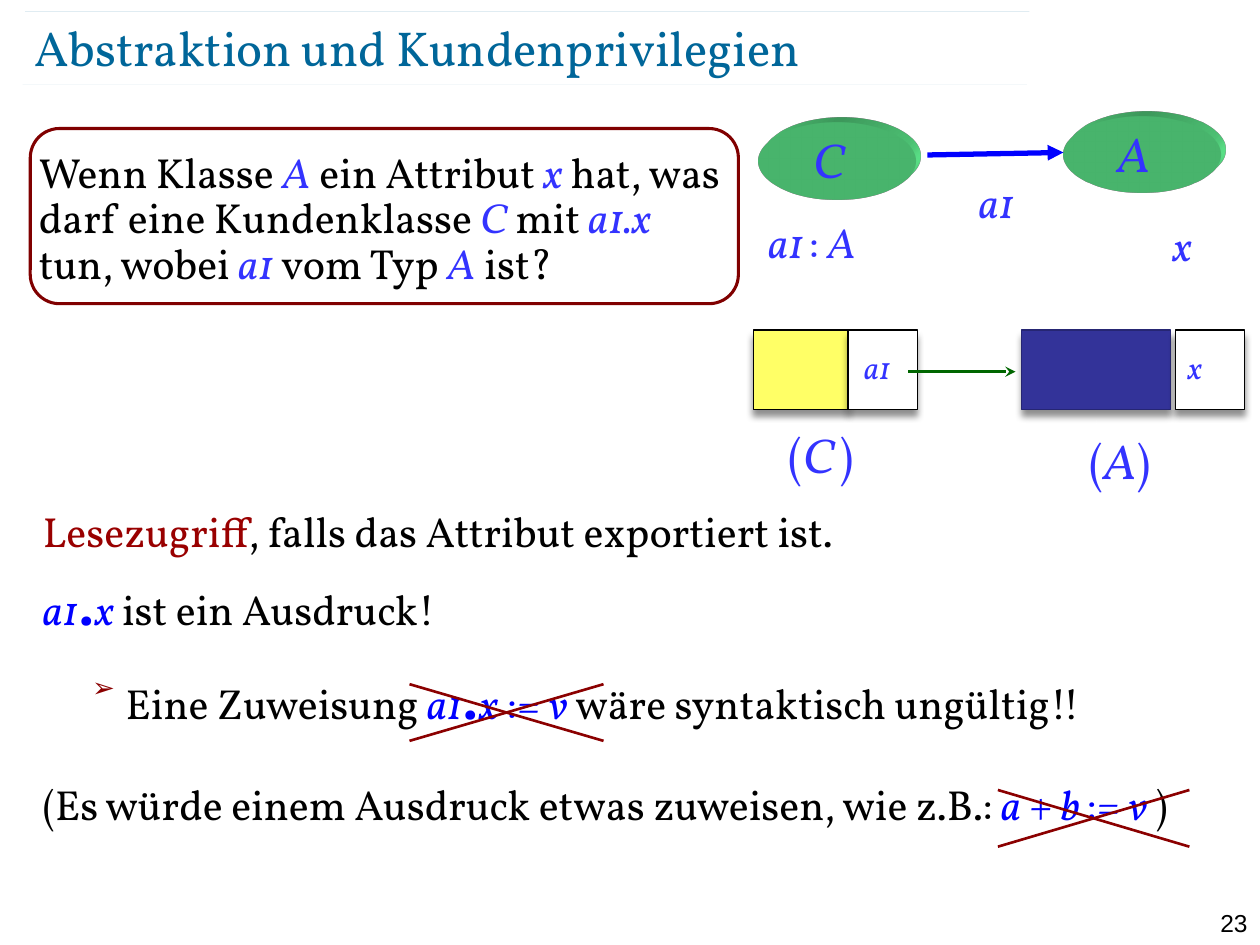
"""Build the slide on abstraction and client privileges."""
from typing import NamedTuple, Optional

from lxml import etree
from pptx import Presentation
from pptx import util as u
from pptx.dml.color import RGBColor
from pptx.enum import shapes, text
from pptx.oxml import ns

BLACK = RGBColor(0, 0, 0)
WHITE = RGBColor(255, 255, 255)
TEAL = RGBColor(0x00, 0x66, 0x99)
MAROON = RGBColor(0x80, 0x00, 0x00)
RED = RGBColor(0x99, 0x00, 0x00)
CROSS = RGBColor(0x8B, 0x00, 0x00)
BLUE = RGBColor(0x00, 0x00, 0xFF)
VIOLET = RGBColor(0x33, 0x33, 0xFF)
GREEN = RGBColor(0x00, 0x66, 0x00)
MINT = RGBColor(0x66, 0xFF, 0x99)
YELLOW = RGBColor(0xFF, 0xFF, 0x66)
NAVY = RGBColor(0x33, 0x33, 0x99)
DARK = RGBColor(0x26, 0x26, 0x73)
FONT = "Vollkorn"
LEFT, CENTER, RIGHT = text.PP_ALIGN.LEFT, text.PP_ALIGN.CENTER, text.PP_ALIGN.RIGHT
KIND = shapes.MSO_SHAPE


class Run(NamedTuple):
    text: str
    color: RGBColor = BLACK
    slant: bool = False
    size: Optional[int] = None


class Label(NamedTuple):
    at: tuple
    runs: list
    size: int = 24
    align: int = LEFT
    inset: float = 0.1


class Block(NamedTuple):
    left: float
    width: float
    fill: RGBColor
    line: RGBColor = BLACK


class Line(NamedTuple):
    start: tuple
    end: tuple
    color: RGBColor
    width: float
    tail: str = ""
    alpha: int = 100


class Item(NamedTuple):
    runs: list
    before: float = 0
    pitch: float = 0.9
    bullet: bool = False


def var(name: str) -> Run:
    return Run(name, VIOLET, True)


def code(name: str, slant: bool = True, size: Optional[int] = None) -> Run:
    return Run(name, BLUE, slant, size)


def add_xml(node, body: str) -> None:
    root = etree.fromstring(f'<r xmlns:a="{ns.nsdecls("a").split(chr(34))[1]}">{body}</r>')
    for part in list(root):
        node.append(part)


def inches(*vals: float) -> list:
    return [u.Inches(val) for val in vals]


def write(para, runs: list, size: int, font: str = FONT) -> None:
    para.font.name, para.font.size = font, u.Pt(size)
    tints, slants = {run.color for run in runs}, {run.slant for run in runs}
    if len(tints) == 1:
        para.font.color.rgb = runs[0].color
    if len(slants) == 1:
        para.font.italic = runs[0].slant
    for run in runs:
        part = para.add_run()
        part.text = run.text
        if len(tints) > 1:
            part.font.color.rgb = run.color
        if len(slants) > 1:
            part.font.italic = run.slant
        if run.size:
            part.font.size = u.Pt(run.size)


def frame_up(frame, left: float, top: float, side: float, base: float) -> None:
    frame.word_wrap = True
    frame.auto_size = text.MSO_AUTO_SIZE.NONE
    frame.margin_left, frame.margin_top, frame.margin_right, frame.margin_bottom = inches(
        left, top, side, base)


def add_label(slide, label: Label, font: str = FONT) -> None:
    frame = slide.shapes.add_textbox(*inches(*label.at)).text_frame
    pad = min(label.inset, 0.05)
    frame_up(frame, label.inset, pad, label.inset, pad)
    para = frame.paragraphs[0]
    para.alignment = label.align
    write(para, label.runs, label.size, font)


def add_line(slide, line: Line) -> None:
    link = slide.shapes.add_connector(
        shapes.MSO_CONNECTOR.STRAIGHT, *inches(*line.start, *line.end))
    link.line.color.rgb, link.line.width = line.color, u.Pt(line.width)
    props = link._element.spPr
    if line.alpha < 100:
        tint = props.find(".//" + ns.qn("a:srgbClr"))
        add_xml(tint, f'<a:alpha val="{line.alpha * 1000}"/>')
    if line.tail:
        add_xml(link.line._get_or_add_ln(), f'<a:tailEnd type="{line.tail}"/>')
    add_xml(props, "<a:effectLst/>")


def add_cross(slide, left: float, top: float, right: float, base: float) -> None:
    add_line(slide, Line((left, base), (right, top), CROSS, 1.5))
    add_line(slide, Line((right, base), (left, top), CROSS, 1.5))


def add_block(slide, block: Block) -> None:
    box = slide.shapes.add_shape(KIND.RECTANGLE, *inches(block.left, 2.62, block.width, 0.63))
    box.fill.solid()
    box.fill.fore_color.rgb = block.fill
    box.line.color.rgb, box.line.width = block.line, u.Pt(0.75)
    add_xml(box._element.spPr,
            '<a:effectLst><a:outerShdw blurRad="50800" dist="50800" dir="5400000" rotWithShape="0">'
            '<a:srgbClr val="000000"><a:alpha val="43000"/></a:srgbClr></a:outerShdw></a:effectLst>')


def add_disc(slide, left: float, top: float, name: str) -> None:
    disc = slide.shapes.add_shape(KIND.OVAL, *inches(left, top, 1.25, 0.61))
    disc.shadow.inherit = False
    disc.fill.solid()
    disc.fill.fore_color.rgb = MINT
    disc.line.fill.background()
    add_xml(disc._element.spPr,
            '<a:scene3d><a:camera prst="legacyObliqueTopRight"/>'
            '<a:lightRig rig="legacyFlat3" dir="b"/></a:scene3d>'
            '<a:sp3d extrusionH="100000" prstMaterial="legacyMatte">'
            f'<a:extrusionClr><a:srgbClr val="{MINT}"/></a:extrusionClr></a:sp3d>')
    add_label(slide, Label((left - 0.16, top + 0.02, 1.44, 0.55), [var(name)], 28, CENTER, 0.04))


def add_head(slide) -> None:
    title = slide.shapes.title
    title.left, title.top, title.width, title.height = inches(0.27, 0.13, 8.69, 0.48)
    frame_up(title.text_frame, 0, 0, 0, 0)
    title.text_frame.vertical_anchor = text.MSO_ANCHOR.MIDDLE
    para = title.text_frame.paragraphs[0]
    para.alignment = LEFT
    write(para, [Run("Abstraktion und Kundenprivilegien", TEAL)], 28)


def add_body(slide, items: list) -> None:
    body = slide.placeholders[1]
    body.left, body.top, body.width, body.height = inches(0.24, 4.01, 9.43, 3.12)
    frame = body.text_frame
    frame_up(frame, 0.1, 0.05, 0.1, 0.05)
    for num, item in enumerate(items):
        para = frame.add_paragraph() if num else frame.paragraphs[0]
        props = para._p.get_or_add_pPr()
        props.set("marL", str(u.Inches(0.59 if item.bullet else 0)))
        props.set("indent", str(u.Inches(-0.2 if item.bullet else 0)))
        para.level = int(item.bullet)
        add_xml(props, f'<a:buClr><a:srgbClr val="{CROSS}"/></a:buClr><a:buSzPct val="65000"/>'
                       '<a:buChar char="➢"/>' if item.bullet else "<a:buNone/>")
        para.line_spacing, para.space_before = item.pitch, u.Pt(item.before)
        write(para, item.runs, 24)


def add_query(slide) -> None:
    box = slide.shapes.add_shape(KIND.ROUNDED_RECTANGLE, *inches(0.24, 1.02, 5.62, 1.39))
    box.shadow.inherit = False
    box.fill.background()
    box.line.color.rgb, box.line.width = MAROON, u.Pt(1.75)
    frame_up(box.text_frame, 0, 0.12, 0, 0)
    box.text_frame.vertical_anchor = text.MSO_ANCHOR.TOP
    para = box.text_frame.paragraphs[0]
    para.alignment, para.line_spacing = LEFT, 0.9
    write(para, [
        Run("Wenn Klasse "), var("A"), Run(" ein Attribut "), var("x "),
        Run("hat, was darf eine Kundenklasse "), var("C"), Run(" mit "), var("a1.x "),
        Run("tun, wobei "), var("a1"), Run(" vom Typ "), var("A"), Run(" ist?")], 24)


def main() -> None:
    deck = Presentation()
    deck.slide_width, deck.slide_height = inches(10, 7.5)
    slide = deck.slides.add_slide(deck.slide_layouts[1])
    add_head(slide)
    dot = code(".", False, 40)
    add_body(slide, [
        Item([Run("Lesezugriff", RED), Run(", falls das Attribut exportiert ist.")]),
        Item([code("a1"), dot, code("x "), Run("ist ein Ausdruck!")], 4.8),
        Item([Run(" Eine Zuweisung "), code("a1"), dot, code("x"), code(" := ", False), code("v"),
              Run(" wäre syntaktisch ungültig!!")], 22, 0.6, True),
        Item([Run("(Es würde einem Ausdruck etwas zuweisen, wie z.B.: "), code("a"),
              code(" + ", False), code("b "), code(":= ", False), code("v "), Run(")")], 31)])
    for left, top in ((0.18, 0.67), (0.2, 0.09)):
        add_line(slide, Line((left, top), (left + 7.97, top), TEAL, 0.1, alpha=35))
    add_query(slide)
    add_disc(slide, 6.02, 0.97, "C")
    add_disc(slide, 8.44, 0.92, "A")
    for block in (Block(5.98, 0.76, YELLOW), Block(6.73, 0.55, WHITE),
                  Block(8.11, 1.18, NAVY, DARK), Block(9.33, 0.55, WHITE)):
        add_block(slide, block)
    add_line(slide, Line((7.36, 1.23), (8.44, 1.21), BLUE, 3, "triangle"))
    add_line(slide, Line((7.21, 2.95), (8.06, 2.95), GREEN, 1.5, "stealth"))
    start, end = Run("(", VIOLET), Run(")", VIOLET)
    for label in (
            Label((6, 1.67, 1.19, 0.5),
                  [var("a1"), Run(" ", VIOLET, True, 16), Run(": ", VIOLET), var("A")]),
            Label((7.67, 1.35, 0.53, 0.5), [var("a1")]),
            Label((9.21, 1.69, 0.53, 0.5), [var("x")]),
            Label((6.76, 2.71, 0.94, 0.4), [var("a1")], 18),
            Label((9.33, 2.71, 0.52, 0.4), [var("x")], 18),
            Label((5.97, 3.33, 1.1, 0.55), [start, var("C"), Run(" ", VIOLET, True, 18), end],
                  28, CENTER, 0.04),
            Label((8.34, 3.38, 1.1, 0.55), [start, var("A"), end], 28, CENTER, 0.04)):
        add_label(slide, label)
    add_label(slide, Label((9.45, 7.16, 0.55, 0.24), [Run("23")], 14, RIGHT), "Arial")
    add_cross(slide, 3.25, 5.43, 4.79, 5.88)
    add_cross(slide, 7.92, 6.27, 9.44, 6.72)
    deck.save("out.pptx")


if __name__ == "__main__":
    main()
